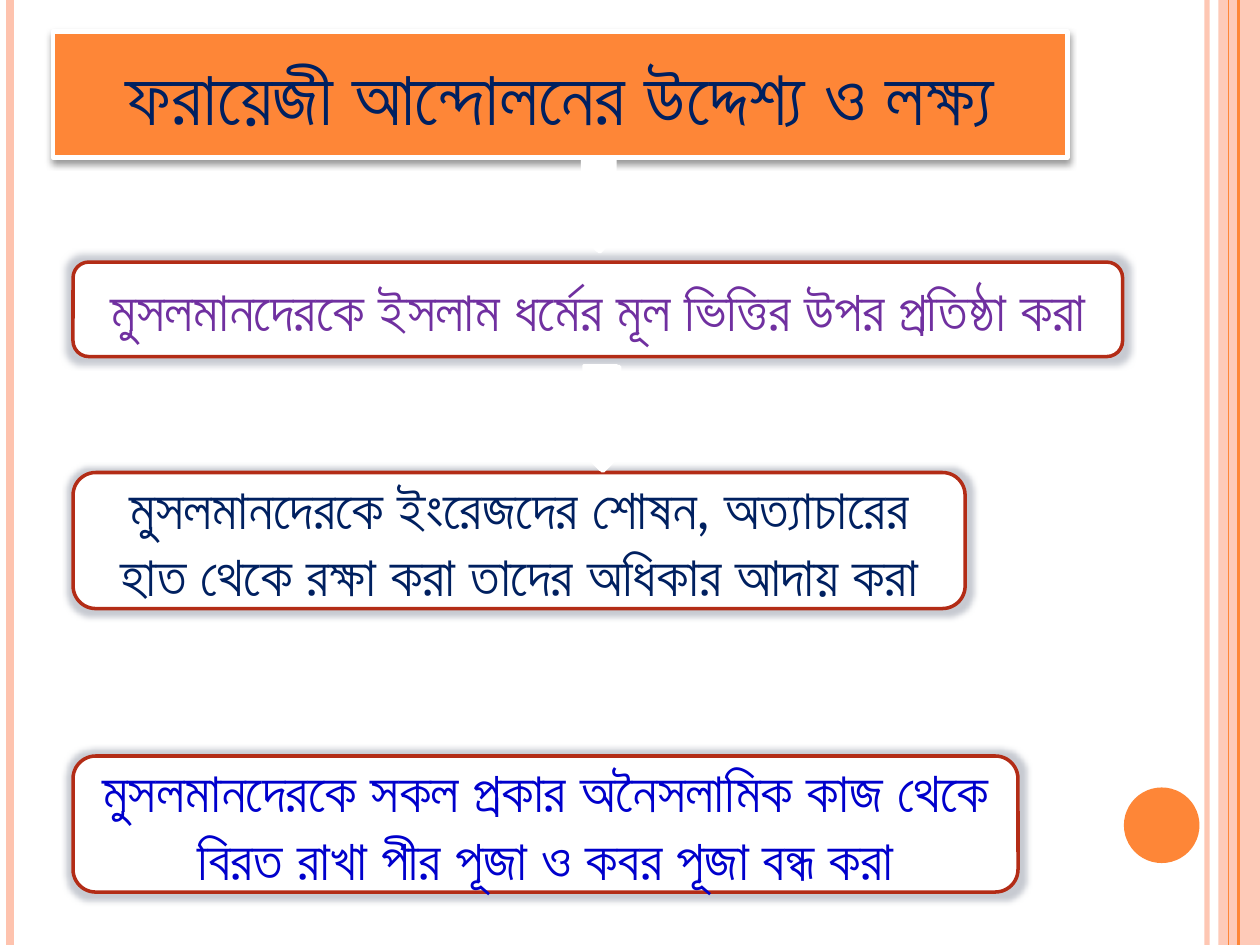
from typing import NamedTuple

from lxml import etree
from pptx import Presentation
from pptx.dml.color import RGBColor
from pptx.enum.shapes import MSO_CONNECTOR, MSO_SHAPE
from pptx.enum.text import MSO_ANCHOR, MSO_AUTO_SIZE, PP_ALIGN
from pptx.oxml import parse_xml
from pptx.oxml.ns import nsdecls, qn
from pptx.util import Inches, Pt

ROUND, ARROW = MSO_SHAPE.ROUNDED_RECTANGLE, MSO_SHAPE.DOWN_ARROW
RECT, OVAL = MSO_SHAPE.RECTANGLE, MSO_SHAPE.OVAL
STRAIGHT = MSO_CONNECTOR.STRAIGHT
CENTER, MIDDLE = PP_ALIGN.CENTER, MSO_ANCHOR.MIDDLE

WHITE = RGBColor(0xFF, 0xFF, 0xFF)
ORANGE = RGBColor(0xFE, 0x86, 0x37)
PEACH = RGBColor(0xFE, 0xC3, 0xAE)
RED = RGBColor(0xB3, 0x2C, 0x16)
NAVY = RGBColor(0x00, 0x20, 0x60)
PURPLE = RGBColor(0x70, 0x30, 0xA0)
BLUE = RGBColor(0x00, 0x00, 0xCC)
FONT = "Lato"


class Stripe(NamedTuple):
    x: float
    color: RGBColor
    width: float
    alpha: int = 100


class Card(NamedTuple):
    top: float
    width: float
    height: float
    color: RGBColor
    text: str


class Box(NamedTuple):
    left: float
    top: float
    width: float
    height: float


STRIPES = [
    Stripe(9.58, PEACH, 3, 93),
    Stripe(0.08, PEACH, 4.5),
    Stripe(9.83, ORANGE, 1.5),
    Stripe(9.75, ORANGE, 0.75),
]
CARDS = [
    Card(2.08, 8.33, 0.75, PURPLE,
         "মুসলমানদেরকে ইসলাম ধর্মের মূল ভিত্তির উপর প্রতিষ্ঠা করা"),
    Card(3.75, 7.08, 1.08, NAVY,
         "মুসলমানদেরকে ইংরেজদের শোষন, অত্যাচারের হাত থেকে রক্ষা করা "
         "তাদের অধিকার আদায় করা"),
    Card(6, 7.5, 1.08, BLUE,
         "মুসলমানদেরকে সকল প্রকার অনৈসলামিক কাজ থেকে বিরত রাখা "
         "পীর পূজা ও কবর পূজা বন্ধ করা"),
]
ARROWS = [
    Box(4.5, 1.25, 0.48, 0.74),
    Box(4.53, 4.99, 0.53, 0.83),
    Box(4.5, 2.9, 0.53, 0.83),
]


def fade(shape, alpha: int) -> None:
    """Make the shape's only colour partly clear."""
    color = next(shape._element.spPr.iter(qn("a:srgbClr")))
    etree.SubElement(color, qn("a:alpha")).set("val", str(alpha * 1000))


def effect(shape, body: str = "") -> None:
    """Replace the theme's effects by the given one."""
    xml = f"<a:effectLst {nsdecls('a')}>{body}</a:effectLst>"
    shape._element.spPr.append(parse_xml(xml))


def paint(shape, fill: RGBColor, line: RGBColor, width: float) -> None:
    shape.fill.solid()
    shape.fill.fore_color.rgb = fill
    shape.line.color.rgb = line
    shape.line.width = Pt(width)


def draw(shapes, kind, box: Box):
    shape = shapes.add_shape(kind, *(Inches(n) for n in box))
    shape.shadow.inherit = False
    return shape


def write(shape, text: str, size: int, color: RGBColor) -> None:
    frame = shape.text_frame
    frame.word_wrap = True
    frame.auto_size = MSO_AUTO_SIZE.NONE
    frame.vertical_anchor = MIDDLE
    para = frame.paragraphs[0]
    para.alignment = CENTER
    run = para.add_run()
    run.text = text
    run.font.name = FONT
    run.font.size = Pt(size)
    run.font.color.rgb = color


def add_stripe(shapes, stripe: Stripe) -> None:
    x = Inches(stripe.x)
    line = shapes.add_connector(STRAIGHT, x, 0, x, Inches(7.5))
    line.line.color.rgb = stripe.color
    line.line.width = Pt(stripe.width)
    if stripe.alpha < 100:
        fade(line, stripe.alpha)
    effect(line)


def add_title(shape, text: str) -> None:
    shape.left, shape.top = Inches(0.42), Inches(0.25)
    shape.width, shape.height = Inches(8.05), Inches(1)
    shape._element.spPr.append(parse_xml(
        f'<a:prstGeom {nsdecls("a")} prst="roundRect"><a:avLst/></a:prstGeom>'))
    paint(shape, ORANGE, WHITE, 2.75)
    effect(shape, f'<a:outerShdw blurRad="{Pt(4)}" dist="{Pt(2)}" dir="5400000">'
                  '<a:srgbClr val="000000"><a:alpha val="40000"/></a:srgbClr>'
                  '</a:outerShdw>')
    write(shape, text, 44, NAVY)


def add_card(shapes, card: Card) -> None:
    shape = draw(shapes, ROUND, Box(0.58, card.top, card.width, card.height))
    paint(shape, WHITE, RED, 2)
    shape._element.spPr.remove(shape._element.spPr.find(qn("a:effectLst")))
    effect(shape, f'<a:glow rad="{Pt(7)}"><a:srgbClr val="A9AEB9">'
                  '<a:alpha val="65000"/></a:srgbClr></a:glow>')
    write(shape, card.text, 32, card.color)


def add_arrows(shapes, shift: float, width: float) -> None:
    group = shapes.add_group_shape()
    for box in ARROWS:
        place = box._replace(left=box.left + shift, top=box.top + shift / 2)
        paint(draw(group.shapes, ARROW, place), WHITE, WHITE, width)


def main() -> None:
    deck = Presentation()
    deck.slide_width, deck.slide_height = Inches(10), Inches(7.5)
    slide = deck.slides.add_slide(deck.slide_layouts[5])
    shapes = slide.shapes

    # Side stripes, band and dot
    for stripe in STRIPES:
        add_stripe(shapes, stripe)
    band = draw(shapes, RECT, Box(9.67, 0, 0.33, 7.5))
    dot = draw(shapes, OVAL, Box(8.92, 6.25, 0.6, 0.6))
    for shape, color in ((band, PEACH), (dot, ORANGE)):
        shape.fill.solid()
        shape.fill.fore_color.rgb = color
        shape.line.fill.background()
    fade(band, 87)
    # The two inner stripes lie on either side of the band
    band._element.addprevious(dot._element)
    shapes[1]._element.addprevious(band._element)

    # Heading and aims
    add_title(shapes.title, "ফরায়েজী আন্দোলনের উদ্দেশ্য ও লক্ষ্য")
    for card in CARDS:
        add_card(shapes, card)

    # Arrows between the aims, in two layers
    add_arrows(shapes, 0.02, 2)
    add_arrows(shapes, 0, 1.5)

    deck.save("out.pptx")


if __name__ == "__main__":
    main()
